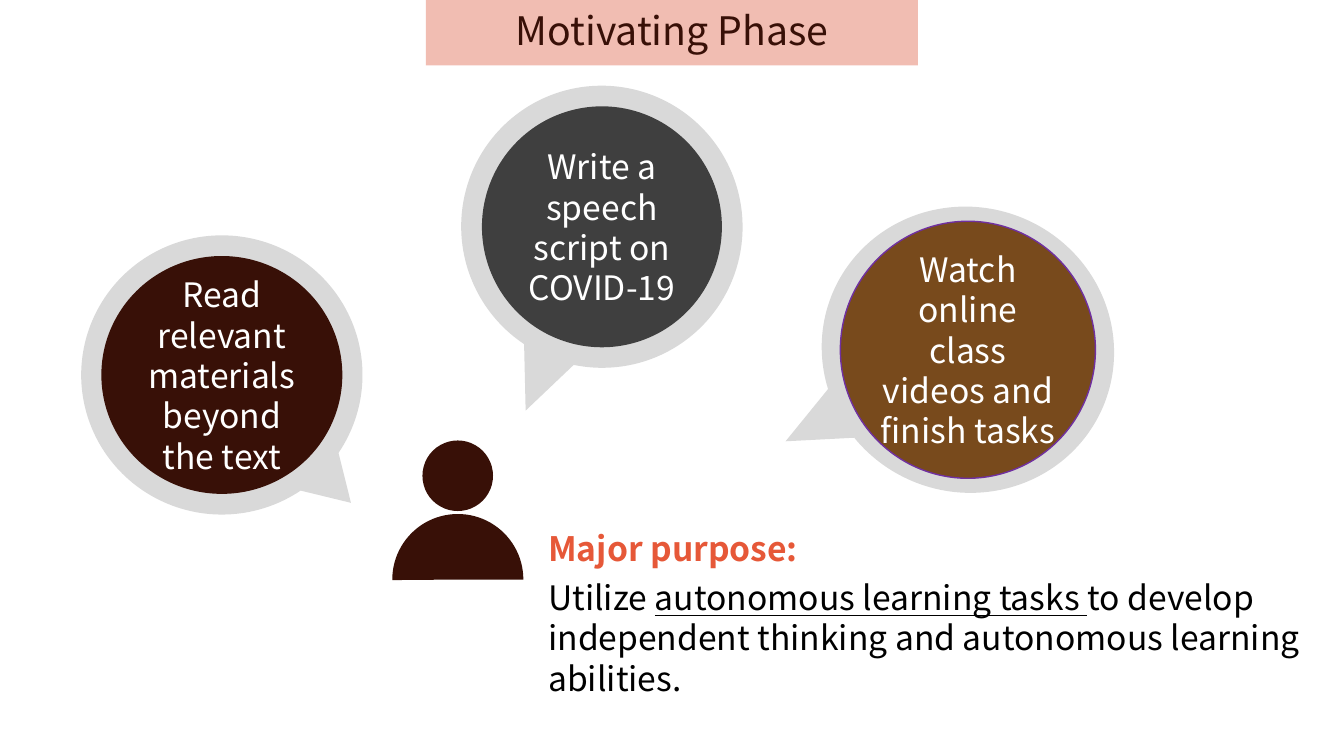
from lxml import etree
from pptx import Presentation
from pptx.dml.color import RGBColor
from pptx.enum.shapes import MSO_SHAPE as Preset
from pptx.enum.text import MSO_ANCHOR as Anchor, MSO_AUTO_SIZE as AutoSize, PP_ALIGN as Align
from pptx.oxml.ns import qn
from pptx.util import Inches, Pt

COLUMNS, ROWS = 13.33, 7.5  # one-inch grid
FONT = "Noto Sans CJK SC"
MAROON, GREY, WHITE = "381007", "D9D9D9", "FFFFFF"

# text, disc colour, outline, centre, callout size, disc size, rotation, pointer
BUBBLES = [
    ("Read relevant materials beyond the text", MAROON, None,
     (2.2, 3.72), (2.79, 2.77), (2.39, 2.36), 0, (0.459, 0.458)),
    ("Write a speech script on COVID-19", "3F3F3F", None,
     (5.97, 2.25), (2.79, 2.8), (2.38, 2.39), 340.9, (-0.47, 0.527)),
    ("Watch online class videos and finish tasks", "784A1C", "7030A0",
     (9.6, 3.47), (2.91, 2.83), (2.53, 2.55), 20.8, (-0.47, 0.527)),
]
PURPOSE = [
    [("Major purpose:", {"bold": True}, "E65838")],
    [("Utilize ", {}, "000000"),
     ("autonomous learning tasks ", {"underline": True}, "000000"),
     ("to develop independent thinking and autonomous learning abilities.", {}, "000000")],
]


def color(hex_text):
    return RGBColor.from_string(hex_text)


def set_format(target, values):
    for name, value in values.items():
        setattr(target, name, value)


def box(center, size):
    """Left, top, width and height of a box around a centre on the grid."""
    (x, y), (width, height) = center, size
    return [Inches(n) for n in (x - width / 2, y - height / 2, width, height)]


def fill(shape, hex_text, opacity=None):
    shape.fill.solid()
    shape.fill.fore_color.rgb = color(hex_text)
    if opacity is not None:
        rgb = shape.fill._xPr.find(f"{qn('a:solidFill')}/{qn('a:srgbClr')}")
        etree.SubElement(rgb, qn("a:alpha")).set("val", str(opacity * 1000))


def add_run(paragraph, text, size, hex_text, **values):
    run = paragraph.add_run()
    run.text = text
    set_format(run.font, {"name": FONT, "size": Pt(size), **values})
    run.font.color.rgb = color(hex_text)


def add_preset(group, preset, center, size, hex_text, rotation=0, adjustments=()):
    shape = group.shapes.add_shape(preset, *box(center, size))
    shape.shadow.inherit = False
    shape.rotation = rotation
    for index, value in enumerate(adjustments):
        shape.adjustments[index] = value
    fill(shape, hex_text)
    shape.line.fill.background()
    return shape


def add_title(slide, text):
    title = slide.shapes.title
    set_format(title, dict(zip(("left", "top", "width", "height"),
                               box((COLUMNS / 2, 0.325), (4.88, 0.65)))))
    fill(title, "E99280", opacity=60)
    set_format(title.text_frame, {"auto_size": AutoSize.NONE, "word_wrap": False,
                                  "vertical_anchor": Anchor.MIDDLE})
    paragraph = title.text_frame.paragraphs[0]
    set_format(paragraph, {"alignment": Align.CENTER, "line_spacing": 0.9,
                           "space_before": Pt(0)})
    add_run(paragraph, text, 28, MAROON)


def add_person(slide):
    person = slide.shapes.add_group_shape()
    add_preset(person, Preset.OVAL, (4.54, 4.72), (0.7, 0.7), MAROON)
    add_preset(person, Preset.PIE, (4.54, 5.75), (1.3, 1.3), MAROON, 90, (53.712, 162))


def add_bubble(slide, text, hex_text, outline, center, callout_size, disc_size, rotation, pointer):
    bubble = slide.shapes.add_group_shape()
    add_preset(bubble, Preset.OVAL_CALLOUT, center, callout_size, GREY, rotation, pointer)
    disc = add_preset(bubble, Preset.OVAL, center, disc_size, hex_text)
    if outline:
        disc.line.color.rgb = color(outline)
        disc.line.width = Pt(1)
    set_format(disc.text_frame, {"word_wrap": True, "vertical_anchor": Anchor.MIDDLE,
                                 "margin_left": 0, "margin_right": 0})
    paragraph = disc.text_frame.paragraphs[0]
    paragraph.alignment = Align.CENTER
    add_run(paragraph, text, 24, WHITE)


def add_purpose(slide):
    frame = slide.shapes.add_textbox(*box((9.26, 6.09), (7.84, 1.8))).text_frame
    frame.word_wrap = True
    for index, runs in enumerate(PURPOSE):
        paragraph = frame.add_paragraph() if index else frame.paragraphs[0]
        paragraph.space_before = Pt(6 if index else 0)
        for text, values, hex_text in runs:
            add_run(paragraph, text, 24, hex_text, **values)


def main():
    presentation = Presentation()
    set_format(presentation, {"slide_width": Inches(COLUMNS), "slide_height": Inches(ROWS)})
    slide = presentation.slides.add_slide(presentation.slide_layouts.get_by_name("Title Only"))
    add_title(slide, "Motivating Phase")
    add_person(slide)
    for bubble in BUBBLES:
        add_bubble(slide, *bubble)
    add_purpose(slide)
    presentation.save("out.pptx")


if __name__ == "__main__":
    main()
